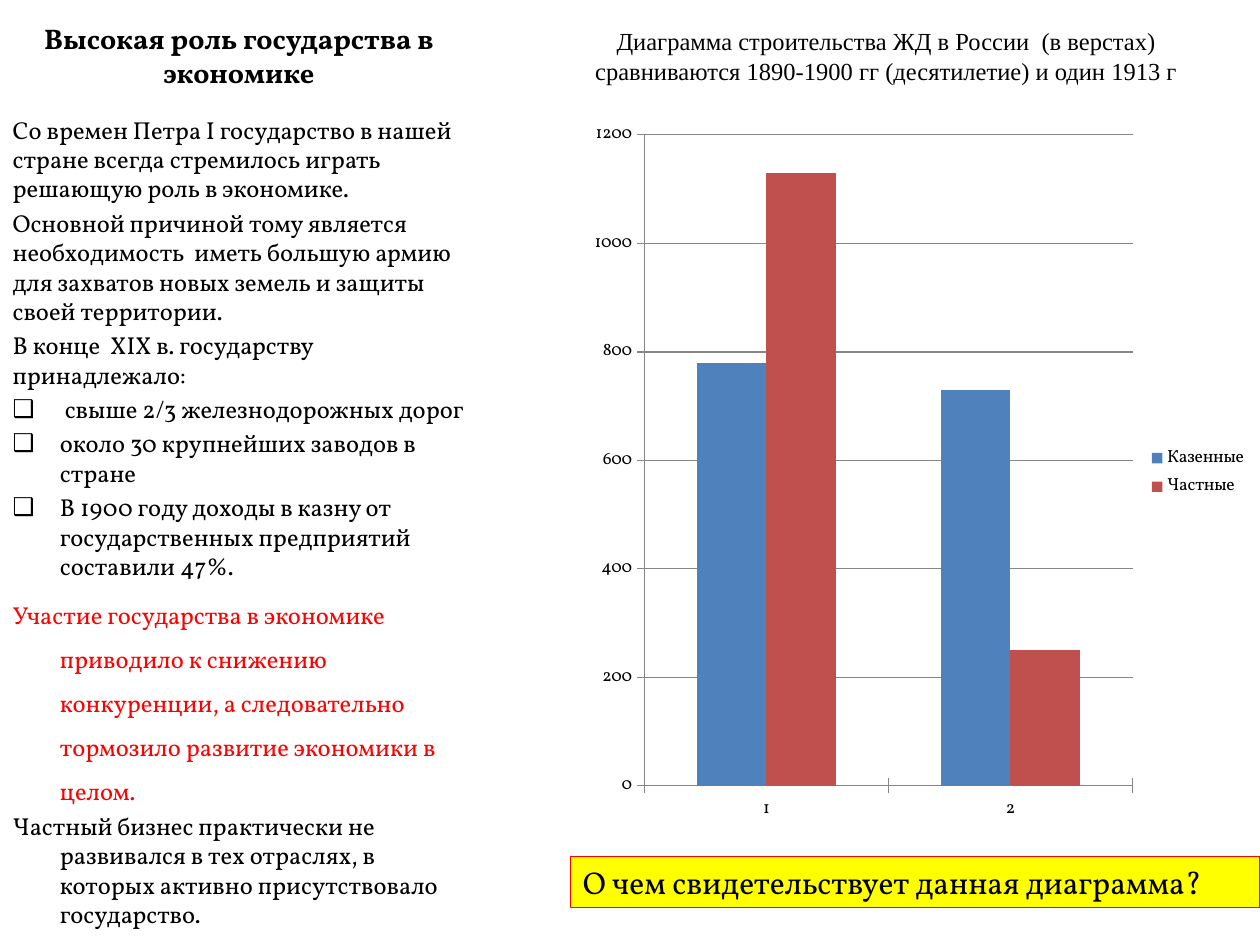
from dataclasses import dataclass

from lxml import etree
from pptx import Presentation
from pptx.chart.data import CategoryChartData
from pptx.dml.color import RGBColor
from pptx.enum import chart as charts, shapes, text
from pptx.oxml.ns import qn
from pptx.util import Pt


@dataclass(frozen=True)
class Theme:
    serif: str = "Vollkorn"
    caption_font: str = "Times New Roman"
    ink: str = "000000"
    accent: str = "FF0000"
    highlight: str = "FFFF00"
    grid: str = "868686"
    series: tuple = ("4F81BD", "C0504D")
    title_size: float = 16.2
    body_size: float = 14
    question_size: float = 18
    chart_size: float = 10


BODY = [
    ("Со времен Петра I государство в нашей стране всегда стремилось играть решающую роль в экономике.", "plain"),
    ("Основной причиной тому является  необходимость  иметь большую армию для захватов новых земель и защиты своей территории.", "plain"),
    ("В конце  ХIХ в. государству принадлежало:", "plain"),
    (" свыше 2/3 железнодорожных дорог", "bullet"),
    ("около 30 крупнейших заводов в стране", "bullet"),
    ("В 1900 году доходы в казну от государственных предприятий составили 47%.", "bullet"),
    ("Участие государства в экономике приводило к снижению конкуренции, а следовательно тормозило развитие экономики в целом.", "accent"),
    ("Частный бизнес практически не развивался в тех отраслях, в которых активно присутствовало государство.", "hanging"),
]
CAPTION = [
    "Диаграмма строительства ЖД в России  (в верстах)",
    "сравниваются 1890-1900 гг (десятилетие) и один 1913 г",
]
QUESTION = "О чем свидетельствует данная диаграмма?"
RAILWAYS = {"Казенные": (780, 730), "Частные": (1130, 250)}


class SlideBuilder:
    def __init__(self, deck, theme):
        self.theme = theme
        self.page = deck.slides.add_slide(deck.slide_layouts[1])

    def apply(self, target, **values):
        for name, value in values.items():
            setattr(target, name, value)

    def style(self, font, size, color=None, name=None, bold=False):
        self.apply(font, size=Pt(size), name=name or self.theme.serif, bold=bold)
        font.color.rgb = RGBColor.from_string(color or self.theme.ink)

    def place(self, shape, box):
        left, top, width, height = map(Pt, box)
        self.apply(shape, left=left, top=top, width=width, height=height)

    def frame(self, shape, anchor, fit=text.MSO_AUTO_SIZE.NONE):
        self.apply(shape.text_frame, word_wrap=True, auto_size=fit, vertical_anchor=anchor)
        return shape.text_frame

    def add_lines(self, frame, lines, align, **font):
        for index, line in enumerate(lines):
            para = frame.add_paragraph() if index else frame.paragraphs[0]
            para.alignment = align
            span = para.add_run()
            span.text = line
            self.style(span.font, **font)

    def title(self, line, box):
        shape = self.page.shapes.title
        self.place(shape, box)
        frame = self.frame(shape, text.MSO_ANCHOR.MIDDLE)
        self.add_lines(frame, [line], text.PP_ALIGN.CENTER, size=self.theme.title_size, bold=True)

    def body(self, items, box):
        shape = self.page.placeholders[1]
        self.place(shape, box)
        frame = self.frame(shape, text.MSO_ANCHOR.MIDDLE)
        lines = [line for line, kind in items]
        self.add_lines(frame, lines, text.PP_ALIGN.LEFT, size=self.theme.body_size)
        for para, (line, kind) in zip(frame.paragraphs, items):
            if kind == "accent":
                para.line_spacing = 1.5
                para.runs[0].font.color.rgb = RGBColor.from_string(self.theme.accent)
            self.indent(para, kind)

    def indent(self, para, kind):
        hang = 0 if kind == "plain" else Pt(27)
        props = para._p.get_or_add_pPr()
        props.set("marL", str(hang))
        props.set("indent", str(-hang))
        if kind == "bullet":
            etree.SubElement(props, qn("a:buChar"), char="❑")
        else:
            etree.SubElement(props, qn("a:buNone"))

    def caption(self, lines, box):
        shape = self.page.shapes.add_textbox(*map(Pt, box))
        frame = self.frame(shape, text.MSO_ANCHOR.TOP, text.MSO_AUTO_SIZE.SHAPE_TO_FIT_TEXT)
        self.add_lines(frame, lines, text.PP_ALIGN.CENTER,
                       size=self.theme.body_size, name=self.theme.caption_font)

    def question(self, line, box):
        shape = self.page.shapes.add_shape(shapes.MSO_SHAPE.RECTANGLE, *map(Pt, box))
        shape.shadow.inherit = False
        shape.fill.solid()
        shape.fill.fore_color.rgb = RGBColor.from_string(self.theme.highlight)
        shape.line.color.rgb = RGBColor.from_string(self.theme.accent)
        shape.line.width = Pt(0.75)
        frame = self.frame(shape, text.MSO_ANCHOR.TOP, text.MSO_AUTO_SIZE.SHAPE_TO_FIT_TEXT)
        self.add_lines(frame, [line], text.PP_ALIGN.LEFT, size=self.theme.question_size)

    def columns(self, categories, series, box):
        data = CategoryChartData()
        data.categories = categories
        for name, values in series.items():
            data.add_series(name, values)
        kind = charts.XL_CHART_TYPE.COLUMN_CLUSTERED
        chart = self.page.shapes.add_chart(kind, *map(Pt, box), data).chart
        self.apply(chart, has_title=False, has_legend=True)
        self.style(chart.font, self.theme.chart_size)
        self.apply(chart.legend, position=charts.XL_LEGEND_POSITION.RIGHT, include_in_layout=False)
        grid = RGBColor.from_string(self.theme.grid)
        for axis in (chart.category_axis, chart.value_axis):
            self.apply(axis, major_tick_mark=charts.XL_TICK_MARK.CROSS,
                       minor_tick_mark=charts.XL_TICK_MARK.NONE)
            axis.format.line.color.rgb = grid
        self.apply(chart.value_axis, minimum_scale=0, maximum_scale=1200,
                   major_unit=200, has_major_gridlines=True)
        chart.value_axis.major_gridlines.format.line.color.rgb = grid
        plot = chart.plots[0]
        self.apply(plot, gap_width=150, overlap=0, vary_by_categories=False)
        for bars, color in zip(plot.series, self.theme.series):
            bars.format.fill.solid()
            bars.format.fill.fore_color.rgb = RGBColor.from_string(color)


def main():
    deck = Presentation()
    deck.slide_width, deck.slide_height = Pt(720), Pt(540)
    slide = SlideBuilder(deck, Theme())
    slide.title("Высокая роль государства в экономике", (0, 11.5, 273, 40.5))
    slide.body(BODY, (0, 56, 273, 484))
    slide.columns(["1", "2"], RAILWAYS, (332, 62, 388, 416))
    slide.caption(CAPTION, (309.5, 11.5, 394, 41))
    slide.question(QUESTION, (326, 489.5, 394, 29))
    deck.save("out.pptx")


if __name__ == "__main__":
    main()
